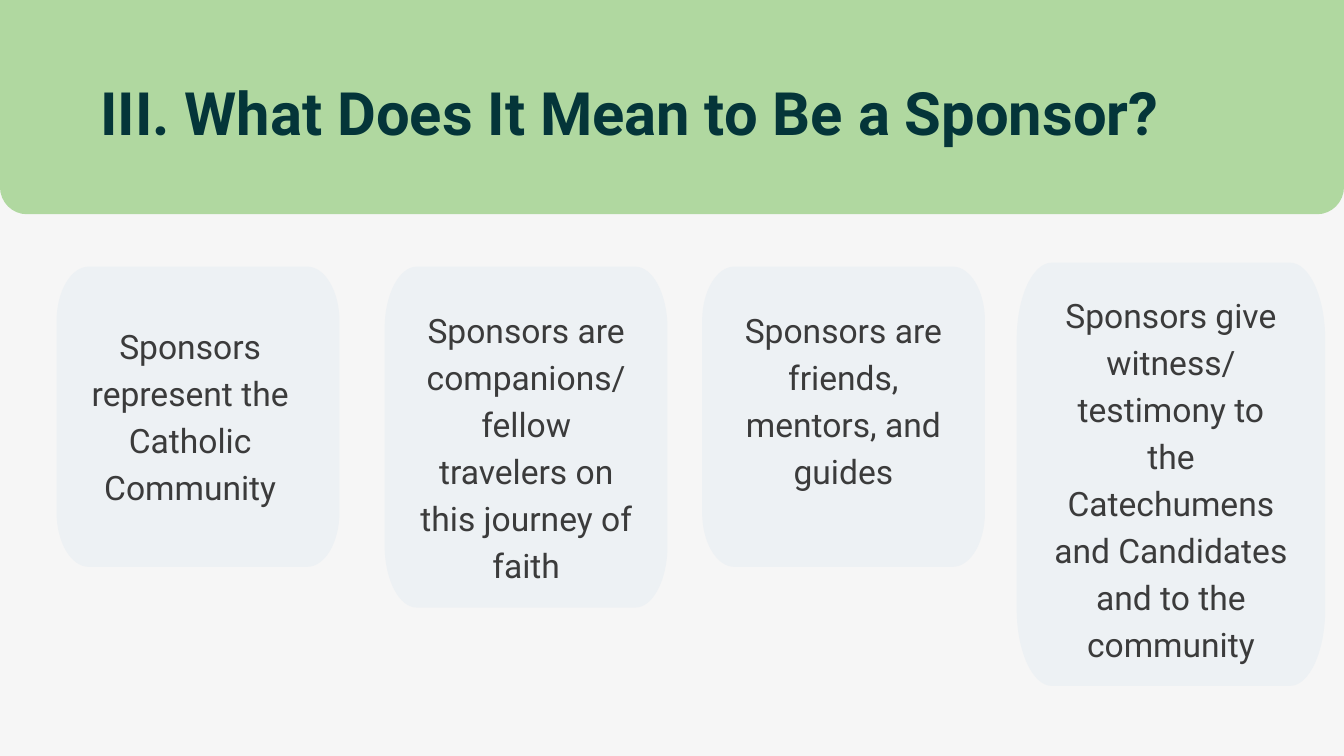
from pptx import Presentation
from pptx.dml.color import RGBColor
from pptx.enum.text import MSO_AUTO_SIZE as Fit, PP_ALIGN as Align
from pptx.oxml.ns import qn
from pptx.util import Cm, Pt

PAPER = RGBColor(0xF6, 0xF6, 0xF6)
GREEN = RGBColor(0xB0, 0xD8, 0xA0)
CLOUD = RGBColor(0xED, 0xF1, 0xF4)
TEAL = RGBColor(0x04, 0x35, 0x39)
GREY = RGBColor(0x3B, 0x3B, 0x3B)

CARDS = [
    ((2.14, 10.08, 10.69, 11.35), (3.15, 12.08, 8.08, 7.04),
     ["Sponsors represent the Catholic Community"]),
    ((14.54, 10.08, 10.69, 12.89), (15.75, 11.46, 8.28, 10.59),
     ["Sponsors are companions/", "fellow travelers on this journey of faith"]),
    ((26.54, 10.08, 10.69, 11.35), (27.74, 11.46, 8.28, 7.04),
     ["Sponsors are friends, mentors, and guides"]),
    ((38.43, 9.93, 11.66, 16), (39.75, 10.88, 9.02, 14.12),
     ["Sponsors give witness/",
      "testimony to the Catechumens and Candidates and to the community"]),
]


class Deck:
    """Holds the text style and the current slide, and draws each kind of element."""

    font = "Roboto"
    curve = ((1, 0), (1, 0.55), (0.55, 1), (0, 1))

    def __init__(self, slide):
        self.slide = slide
        fill = slide.background.fill
        fill.solid()
        fill.fore_color.rgb = PAPER

    def panel(self, box, round_x, round_y, color):
        left, top, wide, high = map(Cm, box)
        rx, ry = round_x * wide, round_y * high
        right, base = left + wide - rx, top + high - ry
        hubs = [(right, base), (left + rx, base), (left + rx, top + ry), (right, top + ry)]
        dots, units = [], self.curve
        for x, y in hubs:
            dots += [(round(x + rx * u), round(y + ry * v)) for u, v in units]
            units = [(-v, u) for u, v in units]
        form = self.slide.shapes.build_freeform(*dots[0])
        form.add_line_segments(dots[1:], close=True)
        shape = form.convert_to_shape()
        self.bend(shape)
        shape.shadow.inherit = False
        shape.fill.solid()
        shape.fill.fore_color.rgb = color
        shape.line.fill.background()

    def bend(self, shape):
        lines = list(shape.element.iter(qn("a:lnTo")))
        for start in range(0, len(lines), 4):
            arc, *rest = lines[start:start + 3]
            for line in rest:
                arc.extend(list(line))
                line.getparent().remove(line)
            arc.tag = qn("a:cubicBezTo")

    def text(self, box, lines, size, lead, color, align, bold=False):
        frame = self.slide.shapes.add_textbox(*map(Cm, box)).text_frame
        frame.word_wrap = True
        frame.auto_size = Fit.SHAPE_TO_FIT_TEXT
        frame.margin_left = frame.margin_right = 0
        frame.margin_top = frame.margin_bottom = 0
        frame.text = "\n".join(lines)
        for para in frame.paragraphs:
            para.alignment = align
            para.line_spacing = Pt(lead)
            for run in para.runs:
                font = run.font
                font.name, font.size, font.bold = self.font, Pt(size), bold
                font.color.rgb = color


def main():
    show = Presentation()
    show.slide_width, show.slide_height = Cm(50.8), Cm(28.58)
    deck = Deck(show.slides.add_slide(show.slide_layouts[6]))
    deck.panel((0, -1.24, 50.8, 9.34), 0.02, 0.11, GREEN)
    deck.text((3.79, 2.64, 41.76, 2.9), ["III. What Does It Mean to Be a Sponsor?"],
              64, 83.2, TEAL, Align.LEFT, True)
    for box, area, lines in CARDS:
        deck.panel(box, 0.114, 0.181, CLOUD)
        deck.text(area, lines, 36, 50.4, GREY, Align.CENTER)
    show.save("out.pptx")


if __name__ == "__main__":
    main()
